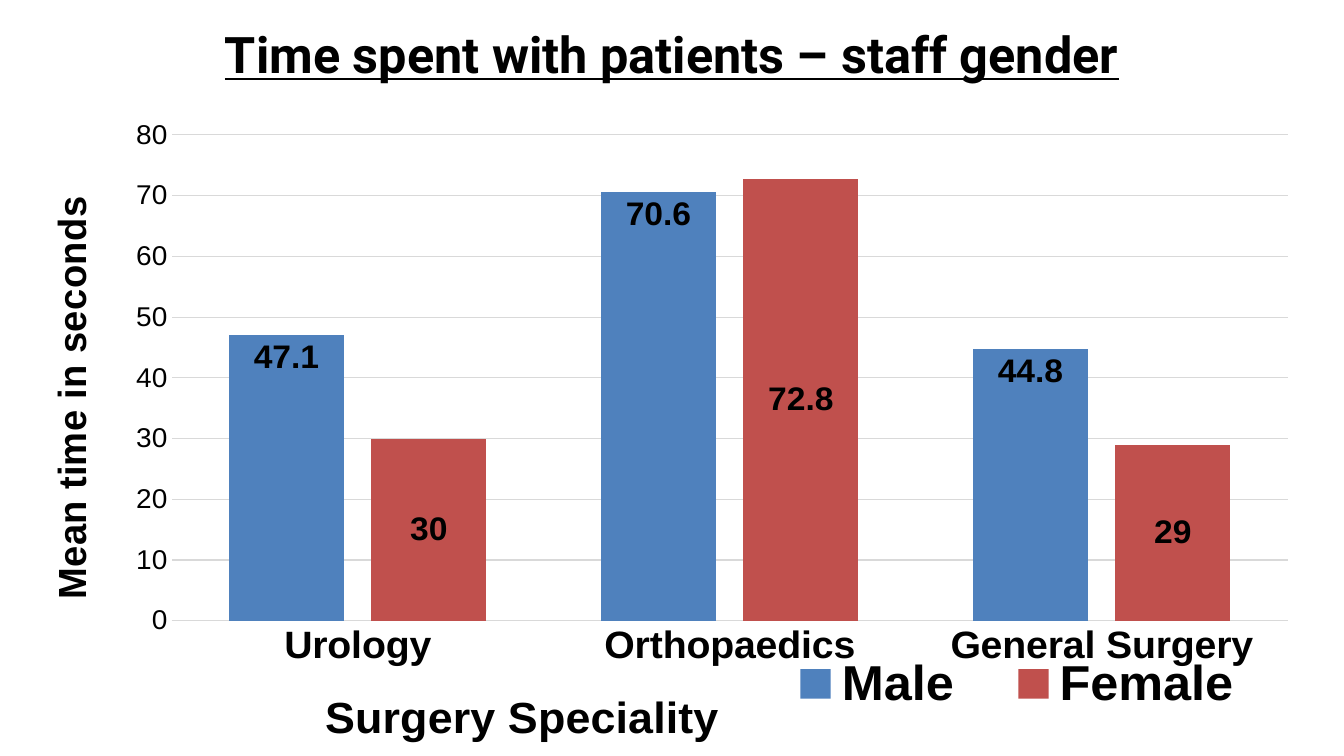
from dataclasses import dataclass

from lxml import etree
from pptx import Presentation
from pptx import util as u
from pptx.chart.data import CategoryChartData
from pptx.dml.color import RGBColor
from pptx.enum import chart as ch, text
from pptx.oxml import parse_xml
from pptx.oxml.ns import nsdecls, qn


@dataclass(frozen=True)
class Theme:
    ink: str = "000000"
    rule: str = "D9D9D9"
    heading_font: str = "Roboto"
    chart_font: str = "Arial"
    heading: int = 36
    legend: int = 36
    category_title: int = 32
    value_title: int = 28
    categories: int = 28
    values: int = 20
    labels: int = 24
    male: tuple = ((0, "5D447E"), (80, "7B57A8"), (100, "7B58A6"))
    female: tuple = ((0, "2C5D98"), (80, "3C7BC7"), (100, "3A7CCB"))


CATEGORIES = ("Urology", "Orthopaedics", "General Surgery")
POSITION = ch.XL_LABEL_POSITION
SERIES = (
    ("Male", (47.1, 70.6, 44.8), Theme.male, POSITION.INSIDE_END),
    ("Female", (30, 72.8, 29), Theme.female, POSITION.CENTER),
)


def apply(target, **values):
    for name, value in values.items():
        setattr(target, name, value)


def place(element, index, inner=False, **fractions):
    """Give a chart part a manual layout in fractions of the chart area."""
    for old in element.findall(qn("c:layout")):
        element.remove(old)
    layout = parse_xml(f"<c:layout {nsdecls('c')}><c:manualLayout/></c:layout>")
    settings = {"layoutTarget": "inner"} if inner else {}
    settings.update(xMode="edge", yMode="edge", **fractions)
    for name, value in settings.items():
        etree.SubElement(layout[0], qn(f"c:{name}")).set("val", str(value))
    element.insert(index, layout)


def fill_gradient(series, stops):
    """Shade the bars from the bottom upwards through several stops."""
    marks = "".join(
        f'<a:gs pos="{position * 1000}"><a:srgbClr val="{color}"/></a:gs>'
        for position, color in stops)
    gradient = parse_xml(
        f'<a:gradFill {nsdecls("a")} rotWithShape="1"><a:gsLst>{marks}</a:gsLst>'
        '<a:lin ang="16200000" scaled="0"/></a:gradFill>')
    properties = series.format.element if hasattr(series.format, "element") \
        else series._element.get_or_add_spPr()
    properties.insert(0, gradient)


class SlideBuilder:
    def __init__(self, presentation, theme):
        self.theme = theme
        self.slide = presentation.slides.add_slide(presentation.slide_layouts[6])

    def style(self, font, size, **extra):
        values = dict(name=self.theme.chart_font, size=u.Pt(size), bold=True)
        apply(font, **{**values, **extra})
        font.color.rgb = RGBColor.from_string(self.theme.ink)

    def rule(self, line, width):
        line.color.rgb = RGBColor.from_string(self.theme.rule)
        line.width = u.Pt(width)

    def heading(self, wording, left, top, width, height):
        box = self.slide.shapes.add_textbox(*map(u.Inches, (left, top, width, height)))
        apply(box.text_frame, word_wrap=True, vertical_anchor=text.MSO_ANCHOR.MIDDLE)
        paragraph = box.text_frame.paragraphs[0]
        apply(paragraph, alignment=text.PP_ALIGN.CENTER, line_spacing=0.9)
        run = paragraph.add_run()
        run.text = wording
        self.style(run.font, self.theme.heading,
                   name=self.theme.heading_font, underline=True)

    def axis(self, axis, wording, title_size, label_size, bold, x, y):
        frame = axis.axis_title.text_frame
        frame.text = wording
        self.style(frame.paragraphs[0].runs[0].font, title_size)
        place(axis.axis_title._element, 1, x=x, y=y)
        apply(axis, major_tick_mark=ch.XL_TICK_MARK.NONE,
              minor_tick_mark=ch.XL_TICK_MARK.NONE)
        self.style(axis.tick_labels.font, label_size, bold=bold)

    def column_chart(self, left, top, width, height):
        theme = self.theme
        data = CategoryChartData()
        data.categories = CATEGORIES
        for name, values, *_ in SERIES:
            data.add_series(name, values)
        chart = self.slide.shapes.add_chart(
            ch.XL_CHART_TYPE.COLUMN_CLUSTERED,
            *map(u.Inches, (left, top, width, height)), data).chart
        apply(chart, has_title=False, has_legend=True)
        self.style(chart.font, 10, name=theme.heading_font, bold=False)

        plot = chart.plots[0]
        apply(plot, gap_width=100, overlap=-24, vary_by_categories=False)
        for series, (_, _, stops, position) in zip(plot.series, SERIES):
            fill_gradient(series, stops)
            apply(series.data_labels, show_value=True, position=position)
            self.style(series.data_labels.font, theme.labels)

        category, value = chart.category_axis, chart.value_axis
        self.axis(category, "Surgery Speciality", theme.category_title,
                  theme.categories, True, x=0.24, y=0.91)
        self.axis(value, "Mean time in seconds", theme.value_title,
                  theme.values, False, x=0.03, y=0.15)
        self.rule(category.format.line, 1)
        apply(value, minimum_scale=0, maximum_scale=80, major_unit=10)
        value.format.line.fill.background()
        self.rule(value.major_gridlines.format.line, 0.75)

        apply(chart.legend, position=ch.XL_LEGEND_POSITION.BOTTOM,
              include_in_layout=False)
        self.style(chart.legend.font, theme.legend)
        place(chart.legend._element, 1, x=0.57, y=0.87, w=0.4, h=0.09)
        plot_area = chart._chartSpace.find(f".//{qn('c:plotArea')}")
        place(plot_area, 0, inner=True, x=0.13, y=0.046, w=0.845, h=0.769)


def main():
    presentation = Presentation()
    apply(presentation, slide_width=u.Inches(13.33), slide_height=u.Inches(7.5))
    builder = SlideBuilder(presentation, Theme())
    builder.column_chart(0, 1.05, 13.1, 6.45)
    builder.heading("Time spent with patients – staff gender", 0, 0.09, 13.33, 0.96)
    presentation.save("out.pptx")


if __name__ == "__main__":
    main()
